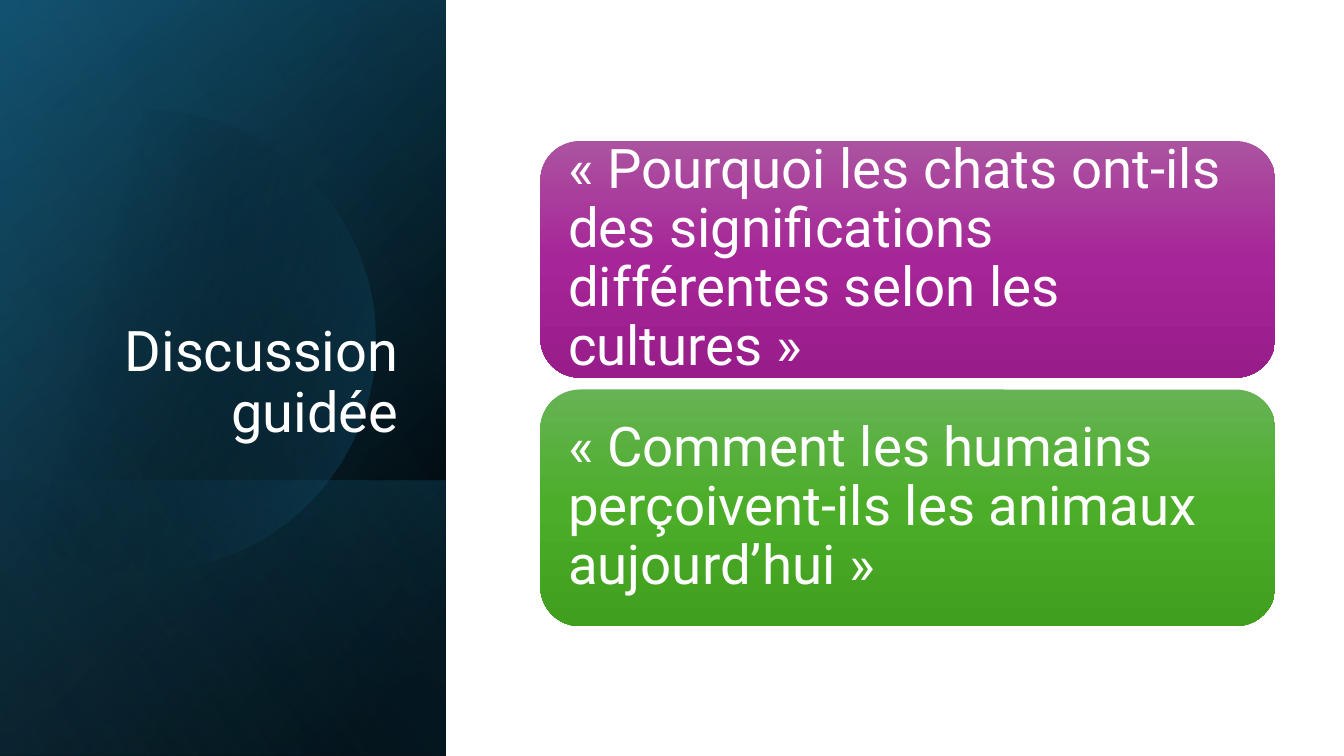
"""Build the guided discussion slide with a dark title panel and two question cards."""
from math import acos, cos, sin

from lxml import etree
from pptx import Presentation
from pptx.dml.color import RGBColor
from pptx.enum.shapes import MSO_SHAPE as SHAPE
from pptx.enum.text import MSO_ANCHOR as ANCHOR, PP_ALIGN as ALIGN
from pptx.oxml.ns import qn
from pptx.util import Pt

FONT = "Roboto"
COLORS = {
    "white": "FFFFFF", "black": "000000",
    "navy": "104862", "teal": "156082", "sky": "46B1E1",
    "purple_top": "AC53A0", "purple_mid": "A62598", "purple_low": "991C8B",
    "green_top": "66B354", "green_mid": "4BAD28", "green_low": "409F1E",
}


def set_gradient(sp, angle, stops):
    """Fill with (position, colour, opacity) stops, without line or shadow."""
    sp.shadow.inherit = False
    sp.line.fill.background()
    sp.fill.gradient()
    grad = sp._element.spPr.find(qn("a:gradFill"))
    for child in list(grad):
        grad.remove(child)
    gs_list = etree.SubElement(grad, qn("a:gsLst"))
    for pos, color, opacity in stops:
        gs = etree.SubElement(gs_list, qn("a:gs"), pos=str(pos * 1000))
        clr = etree.SubElement(gs, qn("a:srgbClr"), val=COLORS[color])
        if opacity < 100:
            etree.SubElement(clr, qn("a:alpha"), val=str(opacity * 1000))
    etree.SubElement(grad, qn("a:lin"), ang=str(angle * 60000), scaled="0")


def set_text(tf, text, size, align, anchor):
    """Write one paragraph in the slide's style."""
    tf.word_wrap = True
    tf.vertical_anchor = anchor
    p = tf.paragraphs[0]
    p.text = text
    p.alignment = align
    p.line_spacing = 0.9
    p.font.name = FONT
    p.font.size = Pt(size)
    p.font.color.rgb = RGBColor.from_string(COLORS["white"])


prs = Presentation()
prs.slide_width, prs.slide_height = Pt(960), Pt(540)
s = prs.slides.add_slide(prs.slide_layouts[6])

PANEL_W, PANEL_H = 318.5, 540
panel_layers = [
    (0, 220, [(8, "black", 100), (100, "navy", 100)]),
    (0, 240, [(0, "black", 0), (99, "teal", 46)]),
    (343, 140, [(2, "teal", 29), (100, "black", 30)]),
]
for top, angle, stops in panel_layers:
    sp = s.shapes.add_shape(SHAPE.RECTANGLE, 0, Pt(top), Pt(PANEL_W), Pt(PANEL_H - top))
    set_gradient(sp, angle, stops)

CX, CY, RADIUS, STEPS = 103, 243, 165, 120
half_arc = acos(-CX / RADIUS)
angles = [half_arc * (2 * i / STEPS - 1) for i in range(STEPS + 1)]
arc = [(Pt(CX + RADIUS * cos(a)), Pt(CY + RADIUS * sin(a))) for a in angles]
builder = s.shapes.build_freeform(*arc[0])
builder.add_line_segments(arc[1:], close=True)
set_gradient(builder.convert_to_shape(), 14, [(29, "black", 0), (100, "teal", 43)])

sp = s.shapes.add_shape(SHAPE.RECTANGLE, 0, 0, Pt(PANEL_W), Pt(PANEL_H))
set_gradient(sp, 150, [(0, "black", 0), (99, "sky", 11)])

title = s.shapes.add_textbox(Pt(46), Pt(132.5), Pt(245.5), Pt(188.5))
set_text(title.text_frame, "Discussion guidée", 40, ALIGN.RIGHT, ANCHOR.BOTTOM)

CARD_TOP, CARD_PITCH = 100.75, 177.5
questions = [
    ("purple", "« Pourquoi les chats ont-ils des significations différentes selon les cultures »"),
    ("green", "« Comment les humains perçoivent-ils les animaux aujourd’hui »"),
]
for i, (hue, question) in enumerate(questions):
    top = CARD_TOP + i * CARD_PITCH
    card = s.shapes.add_shape(SHAPE.ROUNDED_RECTANGLE, Pt(386), Pt(top), Pt(525), Pt(169))
    set_gradient(card, 90, [(0, f"{hue}_top", 100), (50, f"{hue}_mid", 100), (100, f"{hue}_low", 100)])
    tf = card.text_frame
    tf.margin_left = tf.margin_right = tf.margin_top = tf.margin_bottom = Pt(11.5)
    set_text(tf, question, 39, ALIGN.LEFT, ANCHOR.MIDDLE)

prs.save("out.pptx")
